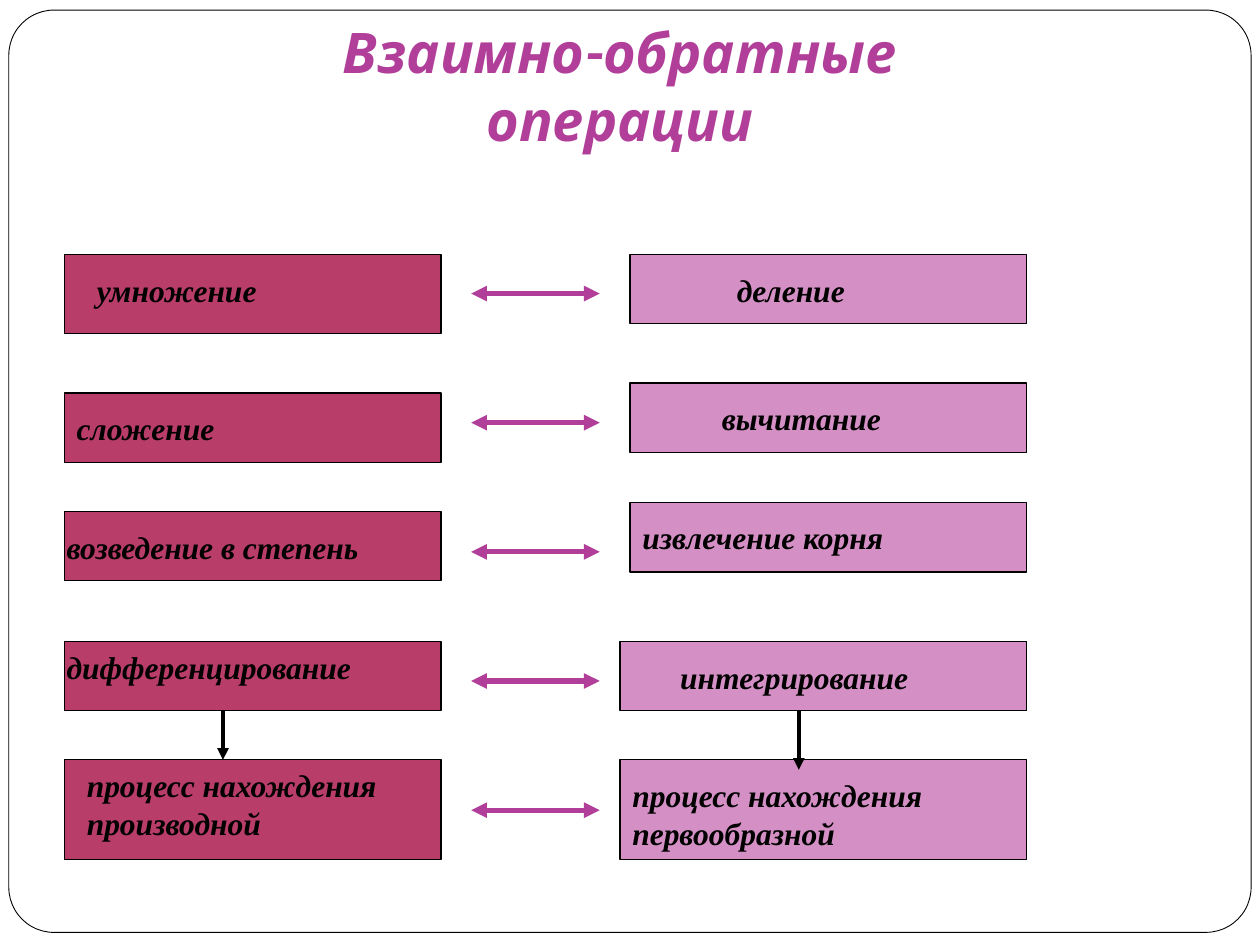
import pptx
import pptx.util
import pptx.dml.color
import pptx.enum.shapes
import pptx.enum.text
import pptx.oxml
from pptx.oxml.ns import qn

Inches = pptx.util.Inches
RGBColor = pptx.dml.color.RGBColor
SHAPE = pptx.enum.shapes.MSO_SHAPE
ANCHOR = pptx.enum.text.MSO_ANCHOR
ALIGN = pptx.enum.text.PP_ALIGN

WHITE = RGBColor(0xFF, 0xFF, 0xFF)
BLACK = RGBColor(0, 0, 0)
CRIMSON = RGBColor(0xB8, 0x3D, 0x68)
PINK = RGBColor(0xD4, 0x90, 0xC5)
PURPLE = RGBColor(0xB1, 0x3F, 0x9A)

# Content: each operation is (text, box top, box height, label left, label top)
TITLE = "Взаимно-обратные операции"
OPERATIONS = [
    ("умножение", 2.02, 0.63, 0.67, 2.10),
    ("сложение", 3.12, 0.55, 0.51, 3.20),
    ("возведение в степень", 4.06, 0.55, 0.43, 4.14),
    ("дифференцирование", 5.09, 0.55, 0.43, 5.09),
    ("процесс нахождения производной", 6.03, 0.79, 0.59, 6.03),
]
INVERSES = [
    ("деление", 2.02, 0.55, 5.75, 2.10),
    ("вычитание", 3.04, 0.55, 5.63, 3.12),
    ("извлечение корня", 3.99, 0.55, 5.00, 4.06),
    ("интегрирование", 5.09, 0.55, 5.30, 5.17),
    ("процесс нахождения первообразной", 6.03, 0.79, 4.92, 6.11),
]
# Box edges: left positions per row, and the common right edge
COLUMNS = [
    (OPERATIONS, [0.51] * 5, 3.50, CRIMSON),
    (INVERSES, [5.00] * 3 + [4.92] * 2, 8.15, PINK),
]
FIRST_ARROW, ARROW_STEP = 2.33, 1.025
DOWN_ARROWS = [(1.77, 5.64, 6.03), (6.34, 5.64, 6.11)]


def write(shape, text, *, size=18, font="Times New Roman", color=BLACK,
          align=ALIGN.LEFT, anchor=ANCHOR.TOP):
    frame = shape.text_frame
    frame.word_wrap = True
    frame.vertical_anchor = anchor
    para = frame.paragraphs[0]
    para.alignment = align
    span = para.add_run()
    span.text = text
    span.font.size = pptx.util.Pt(size)
    span.font.name = font
    span.font.bold = span.font.italic = True
    span.font.color.rgb = color


def add_box(page, kind, left, top, width, height, fill, weight):
    box = page.shapes.add_shape(
        kind, Inches(left), Inches(top), Inches(width), Inches(height))
    box.shadow.inherit = False
    box.fill.solid()
    box.fill.fore_color.rgb = fill
    box.line.color.rgb = BLACK
    box.line.width = pptx.util.Pt(weight)
    return box


def add_arrow(page, x1, y1, x2, y2, color, weight, ends):
    arrow = page.shapes.add_connector(
        pptx.enum.shapes.MSO_CONNECTOR.STRAIGHT,
        Inches(x1), Inches(y1), Inches(x2), Inches(y2))
    arrow.line.color.rgb = color
    arrow.line.width = pptx.util.Pt(weight)
    outline = arrow.line.fill and arrow.element.spPr.find(qn("a:ln"))
    for end in ends:
        outline.append(pptx.oxml.parse_xml(
            f'<a:{end} xmlns:a="http://schemas.openxmlformats.org/drawingml/2006/main" '
            'type="triangle"/>'))
    arrow.element.spPr.append(pptx.oxml.parse_xml(
        '<a:effectLst xmlns:a="http://schemas.openxmlformats.org/drawingml/2006/main"/>'))


def main():
    deck = pptx.Presentation()
    deck.slide_width, deck.slide_height = Inches(10), Inches(7.5)
    page = deck.slides.add_slide(deck.slide_layouts[5])

    # Rounded frame, placed behind the title
    border = add_box(page, SHAPE.ROUNDED_RECTANGLE, 0.07, 0.08, 9.86, 7.32, WHITE, 0.5)
    border.adjustments[0] = 0.049
    title = page.shapes.title
    border.element.addnext(title.element)

    # Title
    title.left, title.top = Inches(1.51), Inches(0.53)
    title.width, title.height = Inches(6.82), Inches(0.78)
    write(title, TITLE, size=32, font="Karla", color=PURPLE,
          align=ALIGN.CENTER, anchor=ANCHOR.BOTTOM)
    title.text_frame.margin_bottom = Inches(0.1)

    # Boxes with their labels
    for items, lefts, right, fill in COLUMNS:
        for (text, top, height, label_left, label_top), left in zip(items, lefts):
            add_box(page, SHAPE.RECTANGLE, left, top, right - left, height, fill, 0.75)
            label = page.shapes.add_textbox(
                Inches(label_left), Inches(label_top),
                Inches(right - label_left), Inches(0.7 if height > 0.7 else 0.4))
            write(label, text)

    # Two-way arrows between the columns
    for row in range(len(OPERATIONS)):
        y = FIRST_ARROW + row * ARROW_STEP
        add_arrow(page, 3.74, y, 4.76, y, PURPLE, 3, ["headEnd", "tailEnd"])

    # Arrows down to the explanations
    for x, top, bottom in DOWN_ARROWS:
        add_arrow(page, x, top, x, bottom, BLACK, 2.25, ["tailEnd"])

    deck.save("out.pptx")


if __name__ == "__main__":
    main()
